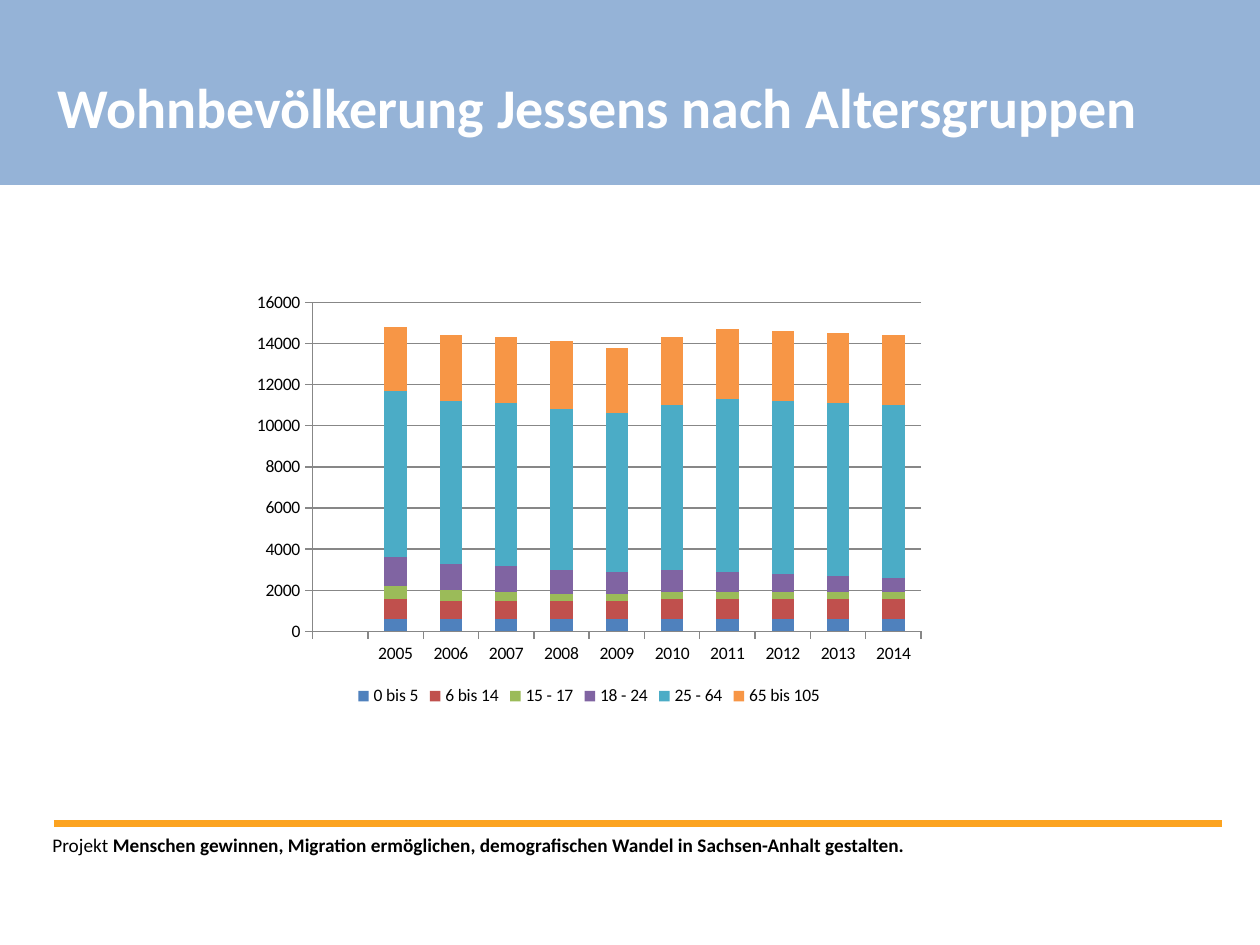
from dataclasses import dataclass

from lxml import etree
from pptx import Presentation
from pptx.chart.data import CategoryChartData
from pptx.dml.color import RGBColor
from pptx.enum import chart as charts, shapes, text
from pptx.oxml.ns import qn
from pptx.util import Emu, Pt

PIXEL = 914400 / 126
FONT = "Calibri"
BLACK = RGBColor(0x00, 0x00, 0x00)
WHITE = RGBColor(0xFF, 0xFF, 0xFF)
GRAY = RGBColor(0x87, 0x87, 0x87)
BAND_BLUE = RGBColor(0x95, 0xB3, 0xD7)
ORANGE = RGBColor(0xFC, 0xA3, 0x20)


@dataclass(frozen=True)
class Box:
    left: int
    top: int
    width: int
    height: int

    def emu(self) -> list[Emu]:
        return [px(n) for n in (self.left, self.top, self.width, self.height)]


@dataclass(frozen=True)
class AgeGroup:
    name: str
    color: RGBColor
    values: tuple[int, ...]


YEARS = [str(year) for year in range(2005, 2015)]
AGE_GROUPS = [
    AgeGroup("0 bis 5", RGBColor(0x4F, 0x81, 0xBD), (600,) * 10),
    AgeGroup("6 bis 14", RGBColor(0xC0, 0x50, 0x4D),
             (1000, 900, 900, 900, 900, 1000, 1000, 1000, 1000, 1000)),
    AgeGroup("15 - 17", RGBColor(0x9B, 0xBB, 0x59),
             (600, 500, 400, 300, 300, 300, 300, 300, 300, 300)),
    AgeGroup("18 - 24", RGBColor(0x80, 0x64, 0xA2),
             (1400, 1300, 1300, 1200, 1100, 1100, 1000, 900, 800, 700)),
    AgeGroup("25 - 64", RGBColor(0x4B, 0xAC, 0xC6),
             (8100, 7900, 7900, 7800, 7700, 8000, 8400, 8400, 8400, 8400)),
    AgeGroup("65 bis 105", RGBColor(0xF7, 0x96, 0x46),
             (3100, 3200, 3200, 3300, 3200, 3300, 3400, 3400, 3400, 3400)),
]


def px(length: int) -> Emu:
    return Emu(round(length * PIXEL))


def add_text(paragraph, content: str, *, size: int, color: RGBColor, bold: bool = False) -> None:
    run = paragraph.add_run()
    run.text = content
    run.font.name = FONT
    run.font.size = Pt(size)
    run.font.bold = bold
    run.font.color.rgb = color


def add_rule(slide, left: int, right: int, y: int) -> None:
    rule = slide.shapes.add_connector(
        shapes.MSO_CONNECTOR.STRAIGHT, px(left), px(y), px(right), px(y))
    rule.line.color.rgb = ORANGE
    rule.line.width = Pt(4)
    etree.SubElement(rule._element.spPr, qn("a:effectLst"))


def add_band(slide, box: Box) -> None:
    band = slide.shapes.add_shape(shapes.MSO_SHAPE.RECTANGLE, *box.emu())
    band.shadow.inherit = False
    band.fill.solid()
    band.fill.fore_color.rgb = BAND_BLUE
    band.line.fill.background()


def place_title(slide, box: Box, content: str) -> None:
    title = slide.shapes.title
    title.left, title.top, title.width, title.height = box.emu()
    frame = title.text_frame
    frame.word_wrap = False
    frame.auto_size = text.MSO_AUTO_SIZE.NONE
    frame.vertical_anchor = text.MSO_ANCHOR.TOP
    paragraph = frame.paragraphs[0]
    paragraph.alignment = text.PP_ALIGN.LEFT
    add_text(paragraph, content, size=32, color=WHITE, bold=True)
    slide.shapes._spTree.append(title._element)


def add_footer(slide, box: Box) -> None:
    frame = slide.shapes.add_textbox(*box.emu()).text_frame
    frame.word_wrap = True
    paragraph = frame.paragraphs[0]
    add_text(paragraph, "Projekt ", size=11, color=BLACK)
    add_text(
        paragraph,
        "Menschen gewinnen, Migration ermöglichen, demografischen Wandel in Sachsen-Anhalt gestalten.",
        size=11, color=BLACK, bold=True)


def add_population_chart(slide, box: Box) -> None:
    data = CategoryChartData()
    data.categories = ["", *YEARS]
    for group in AGE_GROUPS:
        data.add_series(group.name, (None, *group.values))
    chart = slide.shapes.add_chart(
        charts.XL_CHART_TYPE.COLUMN_STACKED, *box.emu(), data).chart
    chart.has_title = False
    chart.font.name = FONT
    chart.font.size = Pt(10)
    chart.font.color.rgb = BLACK
    chart.has_legend = True
    chart.legend.position = charts.XL_LEGEND_POSITION.BOTTOM
    chart.legend.include_in_layout = False

    plot = chart.plots[0]
    plot.gap_width = 150
    plot.overlap = 100
    plot.vary_by_categories = False
    for series, group in zip(plot.series, AGE_GROUPS):
        series.format.fill.solid()
        series.format.fill.fore_color.rgb = group.color

    value_axis = chart.value_axis
    value_axis.minimum_scale = 0
    value_axis.maximum_scale = 16000
    value_axis.major_unit = 2000
    value_axis.has_major_gridlines = True
    for axis in (chart.category_axis, value_axis):
        axis.major_tick_mark = charts.XL_TICK_MARK.OUTSIDE
    for part in (chart.category_axis, value_axis, value_axis.major_gridlines):
        part.format.line.color.rgb = GRAY
        part.format.line.width = Pt(0.75)


def main() -> None:
    presentation = Presentation()
    presentation.slide_width = px(1260)
    presentation.slide_height = px(945)
    slide = presentation.slides.add_slide(presentation.slide_layouts[5])
    add_rule(slide, 54, 1222, 824)
    add_band(slide, Box(0, 0, 1260, 185))
    place_title(slide, Box(45, 66, 1114, 81), "Wohnbevölkerung Jessens nach Altersgruppen")
    add_footer(slide, Box(40, 827, 987, 59))
    add_population_chart(slide, Box(243, 284, 692, 427))
    presentation.save("out.pptx")


if __name__ == "__main__":
    main()
